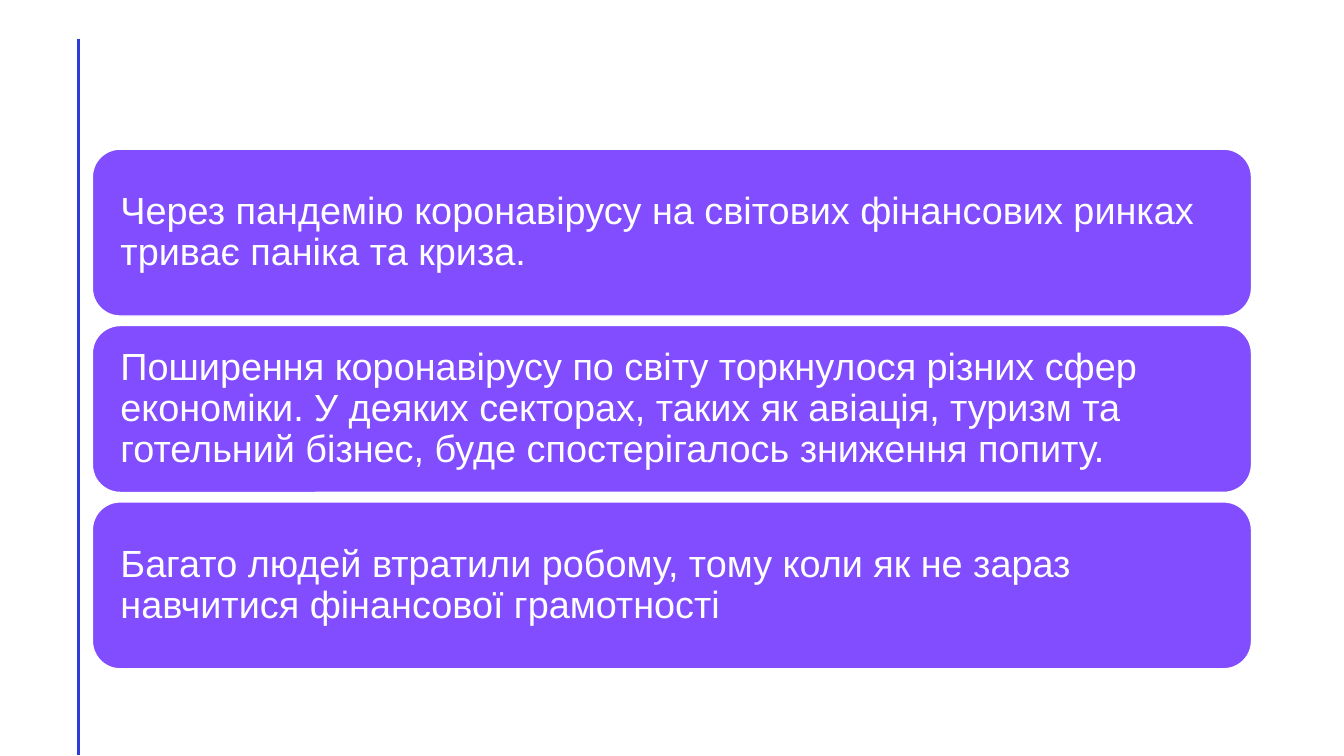
from lxml.etree import SubElement
from pptx import Presentation
from pptx.dml.color import RGBColor
from pptx.enum.shapes import MSO_CONNECTOR, MSO_SHAPE
from pptx.enum.text import MSO_ANCHOR, PP_ALIGN
from pptx.oxml.ns import qn
from pptx.util import Emu, Pt

PX = 9525
BLUE = RGBColor(0x2E, 0x3C, 0xDC)
VIOLET = RGBColor(0x81, 0x4D, 0xFF)
WHITE = RGBColor(0xFF, 0xFF, 0xFF)

CARD_LEFT, CARD_TOP = 88, 142
CARD_WIDTH, CARD_HEIGHT = 1104, 159
CARD_GAP = 9
CARD_INSET = 19

STATEMENTS = [
    "Через пандемію коронавірусу на світових фінансових ринках триває паніка та криза.",
    "Поширення коронавірусу по світу торкнулося різних сфер економіки. "
    "У деяких секторах, таких як авіація, туризм та готельний бізнес, "
    "буде спостерігалось зниження попиту.",
    "Багато людей втратили робому, тому коли як не зараз навчитися фінансової грамотності",
]


def px(n):
    return Emu(n * PX)


def add_rule(s, x, top, bottom):
    line = s.shapes.add_connector(
        MSO_CONNECTOR.STRAIGHT, px(x), px(top), px(x), px(bottom))
    line.line.color.rgb = BLUE
    line.line.width = Pt(2)
    SubElement(line._element.spPr, qn("a:effectLst"))


def add_card(s, top, text):
    sp = s.shapes.add_shape(
        MSO_SHAPE.ROUNDED_RECTANGLE,
        px(CARD_LEFT), px(top), px(CARD_WIDTH), px(CARD_HEIGHT))
    sp.shadow.inherit = False
    sp.fill.solid()
    sp.fill.fore_color.rgb = VIOLET
    sp.line.color.rgb = WHITE
    sp.line.width = Pt(1)
    tf = sp.text_frame
    tf.word_wrap = True
    tf.vertical_anchor = MSO_ANCHOR.MIDDLE
    tf.margin_left = tf.margin_right = px(CARD_INSET)
    tf.margin_top = tf.margin_bottom = px(CARD_INSET)
    tf.text = text
    p = tf.paragraphs[0]
    p.alignment = PP_ALIGN.LEFT
    p.line_spacing = 0.9
    r = p.runs[0]
    r.font.name = "Arial"
    r.font.size = Pt(27)
    r.font.color.rgb = WHITE


def main():
    prs = Presentation()
    prs.slide_width, prs.slide_height = px(1280), px(720)
    s = prs.slides.add_slide(prs.slide_layouts[6])
    add_rule(s, 75, 37, 719)
    for i, text in enumerate(STATEMENTS):
        add_card(s, CARD_TOP + i * (CARD_HEIGHT + CARD_GAP), text)
    prs.save("out.pptx")


if __name__ == "__main__":
    main()
